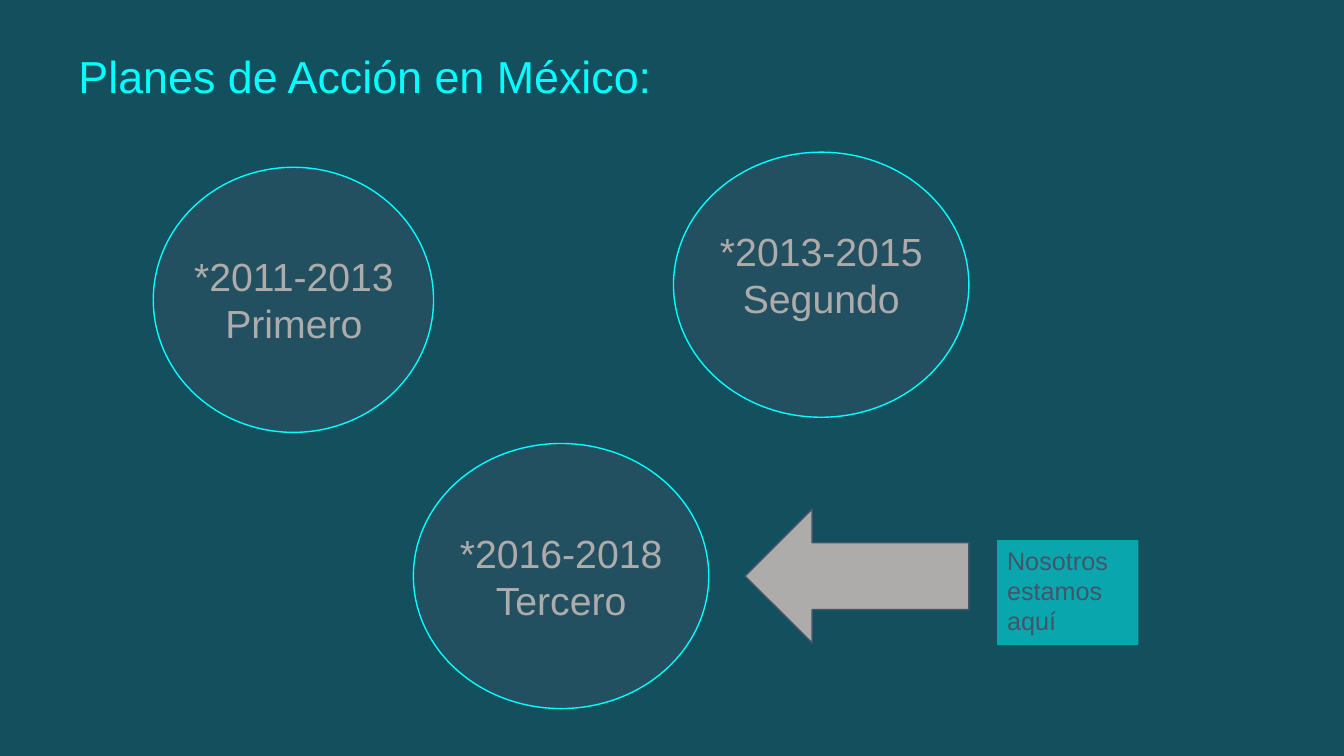
from dataclasses import dataclass

from lxml import etree
from pptx import Presentation
from pptx import util as u
from pptx.dml.color import RGBColor
from pptx.enum import shapes, text
from pptx.oxml import ns

PX = 9144  # EMU in one px, 100 px to the inch

TEAL = RGBColor(0x13, 0x4F, 0x5C)
CYAN = RGBColor(0x00, 0xFF, 0xFF)
SLATE = RGBColor(0x44, 0x54, 0x6A)
GRAY = RGBColor(0xAE, 0xAB, 0xAB)

Box = tuple[int, int, int, int]


@dataclass
class Plan:
    years: str
    name: str
    oval: Box
    label: Box


PLANS = [
    Plan("*2016-2018", "Tercero", (410, 440, 293, 263), (391, 520, 331, 151)),
    Plan("*2013-2015", "Segundo", (668, 151, 293, 263), (649, 221, 331, 104)),
    Plan("*2011-2013", "Primero", (152, 166, 278, 263), (126, 245, 331, 104)),
]


def scale(box: Box) -> list[u.Emu]:
    return [u.Emu(n * PX) for n in box]


def write(shape, words: str, size: int, color: RGBColor,
          align=text.PP_ALIGN.LEFT) -> None:
    frame = shape.text_frame
    frame.text = words
    frame.word_wrap = True
    frame.vertical_anchor = text.MSO_ANCHOR.TOP
    for para in frame.paragraphs:
        para.alignment = align
        for run in para.runs:
            run.font.name = "Arial"
            run.font.size = u.Pt(size)
            run.font.color.rgb = color


def add_text(slide, box: Box, words: str, size: int, color: RGBColor,
             align=text.PP_ALIGN.LEFT) -> None:
    write(slide.shapes.add_textbox(*scale(box)), words, size, color, align)


def add_form(slide, kind, box: Box, fill: RGBColor,
             line: RGBColor | None = None, alpha: int = 100):
    """Add a flat preset shape; alpha is the opacity of its fill in percent."""
    shape = slide.shapes.add_shape(kind, *scale(box))
    shape.shadow.inherit = False
    shape.fill.solid()
    shape.fill.fore_color.rgb = fill
    if alpha < 100:
        color = shape.element.spPr.find(ns.qn("a:solidFill"))[0]
        etree.SubElement(color, ns.qn("a:alpha"), val=str(alpha * 1000))
    if line is None:
        shape.line.fill.background()
    else:
        shape.line.color.rgb = line
        shape.line.width = u.Pt(1)
    return shape


def main() -> None:
    deck = Presentation()
    deck.slide_width, deck.slide_height = u.Inches(13.33), u.Inches(7.5)
    slide = deck.slides.add_slide(deck.slide_layouts[6])
    slide.background.fill.solid()
    slide.background.fill.fore_color.rgb = TEAL

    kinds = shapes.MSO_SHAPE
    add_text(slide, (68, 43, 671, 64), "Planes de Acción en México:", 32, CYAN)
    for plan in PLANS:
        add_form(slide, kinds.OVAL, plan.oval, SLATE, CYAN, 33)
    for plan in PLANS:
        add_text(slide, plan.label, f"{plan.years}\n{plan.name}", 28, GRAY,
                 text.PP_ALIGN.CENTER)

    arrow = add_form(slide, kinds.RIGHT_ARROW, (739, 505, 222, 133), GRAY, SLATE)
    arrow.rotation = 180
    note = add_form(slide, kinds.RECTANGLE, (989, 536, 140, 104), CYAN, alpha=50)
    write(note, "Nosotros estamos aquí", 18, SLATE)

    deck.save("out.pptx")


if __name__ == "__main__":
    main()
